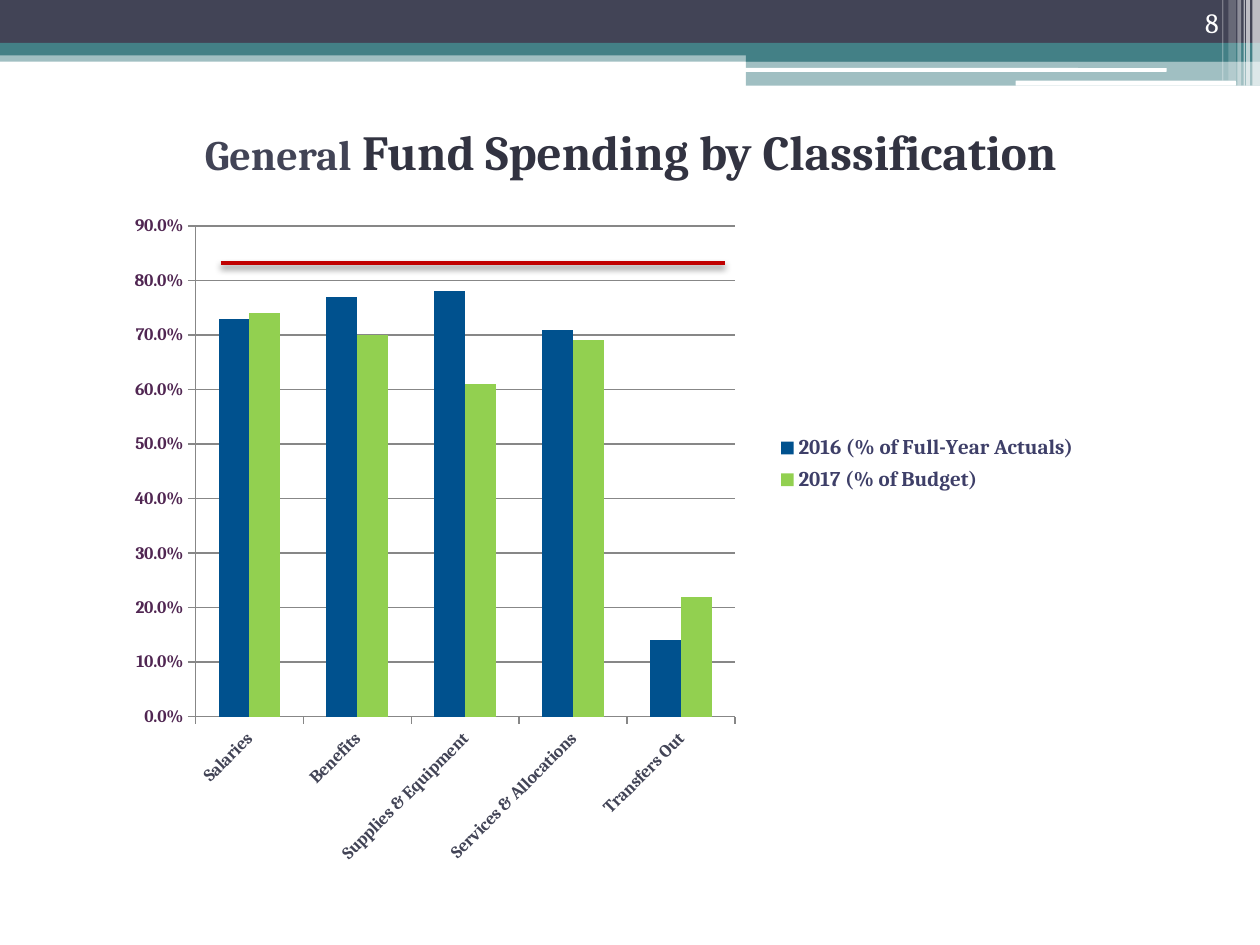
from lxml.etree import SubElement
from pptx import Presentation
from pptx.chart.data import CategoryChartData
from pptx.dml.color import RGBColor
from pptx.enum.chart import XL_CHART_TYPE, XL_LEGEND_POSITION, XL_TICK_MARK
from pptx.enum.shapes import MSO_CONNECTOR, MSO_SHAPE
from pptx.enum.text import MSO_ANCHOR, PP_ALIGN
from pptx.oxml import parse_xml
from pptx.oxml.ns import nsdecls, qn
from pptx.util import Inches, Pt

FONT = "Cambria"
WHITE = RGBColor(0xFF, 0xFF, 0xFF)
SLATE = RGBColor(0x42, 0x44, 0x56)
DARK_SLATE = RGBColor(0x32, 0x33, 0x41)
TEAL = RGBColor(0x43, 0x80, 0x86)
PLUM = RGBColor(0x50, 0x26, 0x52)
INDIGO = RGBColor(0x3E, 0x3F, 0x68)
GRAY = RGBColor(0x87, 0x87, 0x87)
BLUE = RGBColor(0x00, 0x51, 0x8E)
GREEN = RGBColor(0x92, 0xD0, 0x50)
RED = RGBColor(0xC0, 0x00, 0x00)

# left, top, width, height, colour, opacity in percent
BANDS = [
    (0, 0.4, 10, 0.09, TEAL, 50),
    (0, 0, 10, 0.34, SLATE, 100),
    (0, 0.34, 10, 0.1, TEAL, 100),
    (5.92, 0.39, 4.08, 0.1, TEAL, 100),
    (5.92, 0.48, 4.08, 0.2, TEAL, 50),
]
ROUNDED_BARS = [(5.91, 0.54, 3.35, 0.03), (8.06, 0.64, 1.75, 0.04)]
# left, width, height, opacity in percent
STRIPES = [
    (9.94, 0.06, 0.68, 65),
    (9.89, 0.03, 0.68, 65),
    (9.87, 0.01, 0.68, 60),
    (9.82, 0.03, 0.68, 40),
    (9.75, 0.06, 0.64, 20),
    (9.7, 0.01, 0.64, 30),
]

TITLE = [("General", 24, SLATE), (" Fund Spending by Classification", 28, DARK_SLATE)]
CATEGORIES = ["Salaries", "Benefits", "Supplies & Equipment",
              "Services & Allocations", "Transfers Out"]
SERIES = [
    ("2016 (% of Full-Year Actuals)", (0.73, 0.77, 0.78, 0.71, 0.14), BLUE),
    ("2017 (% of Budget)", (0.74, 0.7, 0.61, 0.69, 0.22), GREEN),
]
PLOT_AREA = (0.132, 0.126, 0.463, 0.617)
LEGEND_AREA = (0.61, 0.38, 0.3, 0.09)


def add_block(page, kind, place, color, opacity=100):
    block = page.shapes.add_shape(kind, *map(Inches, place))
    block.shadow.inherit = False
    block.line.fill.background()
    block.fill.solid()
    block.fill.fore_color.rgb = color
    if opacity < 100:
        tint = block.fill._xPr.find(".//" + qn("a:srgbClr"))
        SubElement(tint, qn("a:alpha"), val=str(opacity * 1000))


def add_text(page, place, spans, align, anchor, bold):
    box = page.shapes.add_textbox(*map(Inches, place))
    frame = box.text_frame
    frame.word_wrap = True
    frame.vertical_anchor = anchor
    para = frame.paragraphs[0]
    para.alignment = align
    para.font.name = FONT
    para.font.bold = bold
    for text, size, color in spans:
        span = para.add_run()
        span.text = text
        span.font.size = Pt(size)
        span.font.color.rgb = color


def manual_layout(area, inner=False):
    """Chart layout element placing a part by fractions of the chart."""
    target = '<c:layoutTarget val="inner"/>' if inner else ""
    modes = "".join(f'<c:{side}Mode val="edge"/>' for side in "xy")
    sizes = "".join(f'<c:{side} val="{value}"/>' for side, value in zip("xywh", area))
    return parse_xml(f'<c:layout {nsdecls("c")}><c:manualLayout>{target}{modes}{sizes}'
                     "</c:manualLayout></c:layout>")


def set_font(font, size, color):
    font.name = FONT
    font.size = Pt(size)
    font.bold = True
    font.color.rgb = color


def add_spending_chart(page):
    data = CategoryChartData(number_format="0.0%")
    data.categories = CATEGORIES
    for name, values, _ in SERIES:
        data.add_series(name, values)
    chart = page.shapes.add_chart(
        XL_CHART_TYPE.COLUMN_CLUSTERED,
        Inches(0.33), Inches(1), Inches(9.25), Inches(6.31), data).chart
    chart.has_title = False
    chart.font.name = FONT
    chart.font.size = Pt(10)

    plot = chart.plots[0]
    plot.gap_width = 150
    plot.overlap = 0
    plot.vary_by_categories = False
    for series, (_, _, color) in zip(plot.series, SERIES):
        series.format.fill.solid()
        series.format.fill.fore_color.rgb = color

    for axis, color in ((chart.category_axis, SLATE), (chart.value_axis, PLUM)):
        axis.major_tick_mark = XL_TICK_MARK.OUTSIDE
        axis.format.line.color.rgb = GRAY
        set_font(axis.tick_labels.font, 10, color)
    slant = chart.category_axis._element.find(qn("c:txPr")).find(qn("a:bodyPr"))
    slant.set("rot", "-2700000")
    slant.set("vert", "horz")
    scale = chart.value_axis
    scale.minimum_scale, scale.maximum_scale, scale.major_unit = 0, 0.9, 0.1
    scale.tick_labels.number_format = "0.0%"
    scale.tick_labels.number_format_is_linked = False
    scale.major_gridlines.format.line.color.rgb = GRAY

    chart.has_legend = True
    legend = chart.legend
    legend.position = XL_LEGEND_POSITION.RIGHT
    legend.include_in_layout = False
    set_font(legend.font, 12, INDIGO)

    plot_area = plot._element.getparent()
    for old in plot_area.findall(qn("c:layout")):
        plot_area.remove(old)
    plot_area.insert(0, manual_layout(PLOT_AREA, inner=True))
    for old in legend._element.findall(qn("c:layout")):
        legend._element.remove(old)
    legend._element.find(qn("c:legendPos")).addnext(manual_layout(LEGEND_AREA))


def add_target_line(page):
    target = page.shapes.add_connector(
        MSO_CONNECTOR.STRAIGHT, Inches(1.75), Inches(2.09), Inches(5.75), Inches(2.09))
    target.line.color.rgb = RED
    target.line.width = Pt(2.5)
    target._element.spPr.append(parse_xml(
        f'<a:effectLst {nsdecls("a")}><a:outerShdw blurRad="{Pt(4)}" dist="{Pt(2)}" '
        'dir="5400000" rotWithShape="0"><a:srgbClr val="000000"><a:alpha val="45000"/>'
        "</a:srgbClr></a:outerShdw></a:effectLst>"))


def main():
    deck = Presentation()
    deck.slide_width, deck.slide_height = Inches(10), Inches(7.5)
    page = deck.slides.add_slide(deck.slide_layouts[6])

    for *place, color, opacity in BANDS:
        add_block(page, MSO_SHAPE.RECTANGLE, place, color, opacity)
    for place in ROUNDED_BARS:
        add_block(page, MSO_SHAPE.ROUNDED_RECTANGLE, place, WHITE)
    for left, width, height, opacity in STRIPES:
        add_block(page, MSO_SHAPE.RECTANGLE, (left, 0, width, height), WHITE, opacity)

    add_text(page, (0.17, 0.66, 9.67, 1.08), TITLE,
             PP_ALIGN.CENTER, MSO_ANCHOR.MIDDLE, True)
    add_text(page, (8.94, 0, 0.83, 0.36), [("8", 16, WHITE)],
             PP_ALIGN.RIGHT, MSO_ANCHOR.BOTTOM, False)
    add_spending_chart(page)
    add_target_line(page)
    deck.save("out.pptx")


if __name__ == "__main__":
    main()
